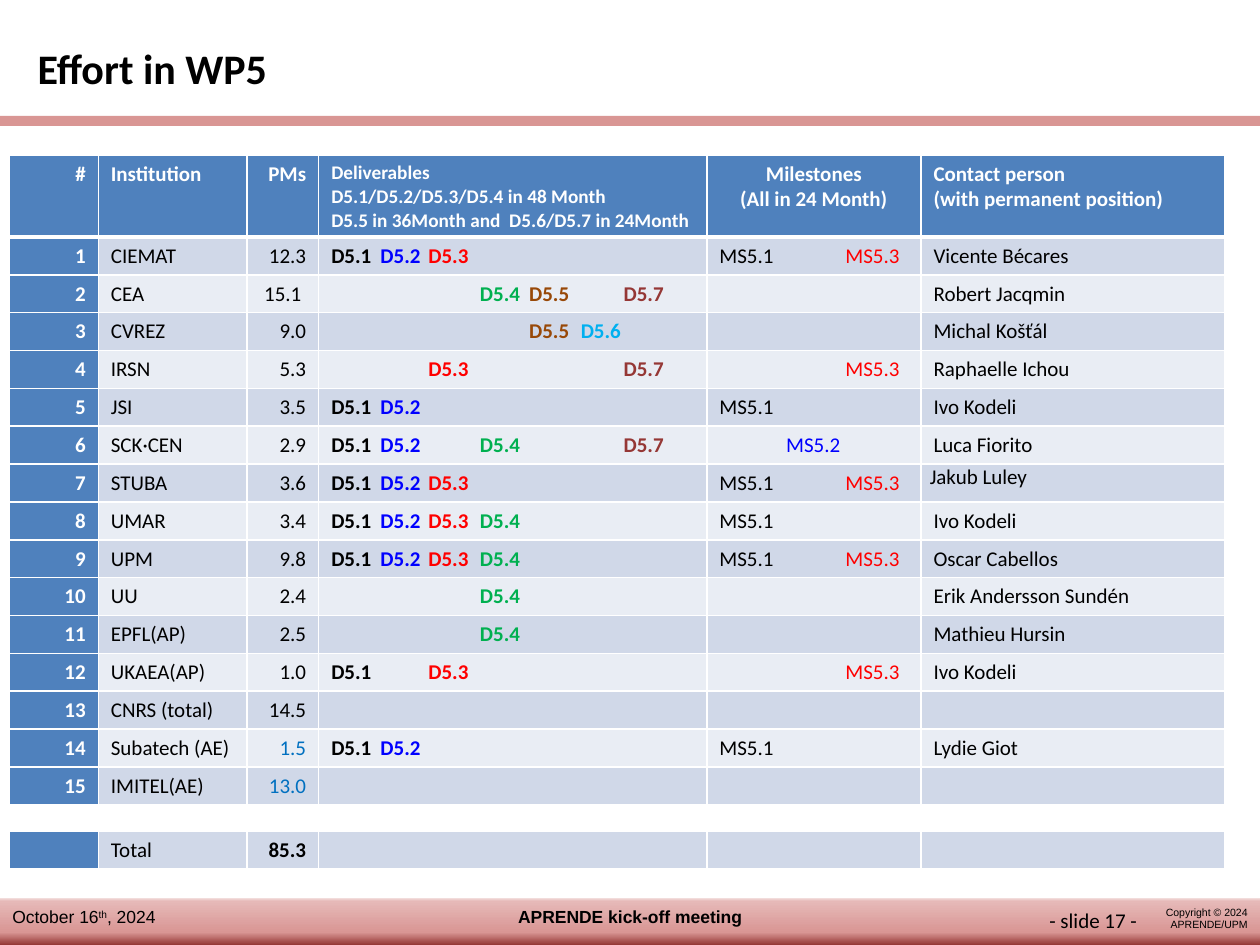
"""Build the WP5 effort slide with its partner table and footer."""
from lxml.etree import SubElement
from pptx import Presentation
from pptx.dml.color import RGBColor
from pptx.enum.shapes import MSO_SHAPE
from pptx.enum.text import MSO_AUTO_SIZE, PP_ALIGN
from pptx.oxml.ns import qn
from pptx.util import Inches, Pt


class Theme:
    heading_font, footer_font = "Calibri", "Arial"
    title_size, body_size, small_size, footer_size, copyright_size = 24, 12, 11, 10, 6
    black, white = "000000", "FFFFFF"
    header, band_dark, band_light = "4F81BD", "D0D8E8", "E9EDF4"
    rule, estimate = "D99694", "0070C0"
    footer_stops = [(0, "953735"), (27, "D99694"), (94, "E6B9B8"), (100, "F2DCDB")]
    deliverables = ["000000", "0000FF", "FF0000", "00B050", "984807", "00B0F0", "953735"]
    milestones = ["000000", "0000FF", "FF0000"]


def format_runs(paragraph, size, color, bold=False, font=Theme.heading_font):
    for run in paragraph.runs:
        run.font.name = font
        run.font.size = Pt(size)
        run.font.bold = bold
        run.font.color.rgb = RGBColor.from_string(color)


def add_label(slide, box, text, size, font, align=PP_ALIGN.LEFT, bold=False, wrap=True):
    label = slide.shapes.add_textbox(*[Inches(length) for length in box])
    frame = label.text_frame
    frame.word_wrap = wrap
    frame.auto_size = MSO_AUTO_SIZE.SHAPE_TO_FIT_TEXT
    frame.text = text
    for paragraph in frame.paragraphs:
        paragraph.alignment = align
        format_runs(paragraph, size, Theme.black, bold, font)
    return label


HEADERS = [
    "#",
    "Institution",
    "PMs",
    "Deliverables\nD5.1/D5.2/D5.3/D5.4 in 48 Month\nD5.5 in 36Month and  D5.6/D5.7 in 24Month",
    "Milestones\n(All in 24 Month)",
    "Contact person\n(with permanent position)",
]
PARTNERS = [
    ("CIEMAT", "12.3", [1, 2, 3], [1, 3], "Vicente Bécares"),
    ("CEA", "15.1 ", [4, 5, 7], [], "Robert Jacqmin"),
    ("CVREZ", "9.0", [5, 6], [], "Michal Košťál"),
    ("IRSN", "5.3", [3, 7], [3], "Raphaelle Ichou"),
    ("JSI", "3.5", [1, 2], [1], "Ivo Kodeli"),
    ("SCK·CEN", "2.9", [1, 2, 4, 7], [2], "Luca Fiorito"),
    ("STUBA", "3.6", [1, 2, 3], [1, 3], "Jakub Luley"),
    ("UMAR", "3.4", [1, 2, 3, 4], [1], "Ivo Kodeli"),
    ("UPM", "9.8", [1, 2, 3, 4], [1, 3], "Oscar Cabellos"),
    ("UU", "2.4", [4], [], "Erik Andersson Sundén"),
    ("EPFL(AP)", "2.5", [4], [], "Mathieu Hursin"),
    ("UKAEA(AP)", "1.0", [1, 3], [3], "Ivo Kodeli"),
    ("CNRS (total)", "14.5", [], [], ""),
    ("Subatech (AE)", "1.5", [1, 2], [1], "Lydie Giot"),
    ("IMITEL(AE)", "13.0", [], [], ""),
]
COLUMN_WIDTHS = [0.71, 1.18, 0.57, 3.08, 1.7, 2.41]
ROW_HEIGHTS = [0.65] + [0.3] * len(PARTNERS) + [0.21, 0.29]
ALIGNMENTS = [PP_ALIGN.RIGHT, PP_ALIGN.LEFT, PP_ALIGN.RIGHT] + [PP_ALIGN.LEFT] * 3
CODE_COLUMNS = {
    3: ("D5.", Theme.deliverables, [0.39, 0.77, 1.18, 1.57, 1.98, 2.32], True),
    4: ("MS5.", Theme.milestones, [0.53, 1.0], False),
}

presentation = Presentation()
presentation.slide_width, presentation.slide_height = Inches(10), Inches(7.5)
slide = presentation.slides.add_slide(presentation.slide_layouts[6])

bars = []
for top, height in [(7.13, 0.37), (0.92, 0.08)]:
    bar = slide.shapes.add_shape(
        MSO_SHAPE.RECTANGLE, 0, Inches(top), Inches(10), Inches(height)
    )
    bar.shadow.inherit = False
    bar.line.fill.background()
    bars.append(bar)
footer_bar, title_rule = bars
title_rule.fill.solid()
title_rule.fill.fore_color.rgb = RGBColor.from_string(Theme.rule)
footer_bar.fill.gradient()
footer_bar.fill.gradient_angle = 90
stop_list = footer_bar._element.spPr.find(".//" + qn("a:gsLst"))
for stop in list(stop_list):
    stop_list.remove(stop)
for position, color in Theme.footer_stops:
    stop = SubElement(stop_list, qn("a:gs"), pos=str(position * 1000))
    SubElement(stop, qn("a:srgbClr"), val=color)

date_label = add_label(
    slide, (0, 7.14, 2.78, 0.27), "October 16", Theme.footer_size, Theme.footer_font
)
date_paragraph = date_label.text_frame.paragraphs[0]
for text in ["th", ", 2024"]:
    date_paragraph.add_run().text = text
format_runs(date_paragraph, Theme.footer_size, Theme.black, font=Theme.footer_font)
date_paragraph.runs[1].font._element.set("baseline", "30000")

add_label(slide, (3.61, 7.14, 2.78, 0.27), "APRENDE kick-off meeting",
          Theme.footer_size, Theme.footer_font, PP_ALIGN.CENTER, bold=True)
add_label(slide, (9.09, 7.14, 0.91, 0.3), "Copyright © 2024\nAPRENDE/UPM",
          Theme.copyright_size, Theme.footer_font, PP_ALIGN.RIGHT)
add_label(slide, (0.2, 0.29, 5, 0.5), "Effort in WP5",
          Theme.title_size, Theme.heading_font, bold=True)
add_label(slide, (8.23, 7.15, 0.93, 0.3), "- slide 17 -",
          Theme.body_size, Theme.heading_font, wrap=False)

rows = [HEADERS]
rows += [(str(number), *partner) for number, partner in enumerate(PARTNERS, 1)]
rows += [[""] * 6, ["", "Total", "85.3", "", "", ""]]
gap_row, total_row = len(rows) - 2, len(rows) - 1

table = slide.shapes.add_table(
    len(rows), len(HEADERS), Inches(0.07), Inches(1.23),
    Inches(sum(COLUMN_WIDTHS)), Inches(sum(ROW_HEIGHTS)),
).table
for column, width in zip(table.columns, COLUMN_WIDTHS):
    column.width = Inches(width)
for row, height in zip(table.rows, ROW_HEIGHTS):
    row.height = Inches(height)

for row_index, values in enumerate(rows):
    for column_index, value in enumerate(values):
        cell = table.cell(row_index, column_index)
        is_header = row_index == 0
        is_blue = is_header or column_index == 0
        properties = cell._tc.get_or_add_tcPr()
        for side in ["lnL", "lnR", "lnT", "lnB"]:
            thick = (is_header and side == "lnB") or (row_index == 1 and side == "lnT")
            border = SubElement(properties, qn(f"a:{side}"), w=str(Pt(3 if thick else 1)))
            border_fill = SubElement(border, qn("a:solidFill"))
            SubElement(border_fill, qn("a:srgbClr"), val=Theme.white)
        fill_color = Theme.band_dark if row_index % 2 else Theme.band_light
        if row_index == gap_row:
            fill_color = Theme.white
            cell.margin_top = cell.margin_bottom = 0
        elif is_blue:
            fill_color = Theme.header
        elif row_index == total_row:
            fill_color = Theme.band_dark
        cell.fill.solid()
        cell.fill.fore_color.rgb = RGBColor.from_string(fill_color)

        size = Theme.small_size if is_header and column_index == 3 else Theme.body_size
        if isinstance(value, list):
            prefix, colors, tab_stops, bold = CODE_COLUMNS[column_index]
            paragraph = cell.text_frame.paragraphs[0]
            previous = 1
            for code in value:
                paragraph.add_run().text = "\t" * (code - previous) + f"{prefix}{code}"
                previous = code
            format_runs(paragraph, size, Theme.black, bold)
            for run, code in zip(paragraph.runs, value):
                run.font.color.rgb = RGBColor.from_string(colors[code - 1])
            tab_list = SubElement(paragraph._p.get_or_add_pPr(), qn("a:tabLst"))
            for tab_stop in tab_stops:
                SubElement(tab_list, qn("a:tab"), pos=str(Inches(tab_stop)), algn="l")
        else:
            cell.text_frame.text = value
            color = Theme.white if is_blue else Theme.black
            if column_index == 2 and value in ("1.5", "13.0"):
                color = Theme.estimate
            for paragraph in cell.text_frame.paragraphs:
                paragraph.alignment = ALIGNMENTS[column_index]
                if is_header and column_index == 4:
                    paragraph.alignment = PP_ALIGN.CENTER
                format_runs(paragraph, size, color, is_blue or value == "85.3")
        if value in ("", []):
            empty_size = 6 if row_index == gap_row else size
            ending = cell.text_frame.paragraphs[0]._p.get_or_add_endParaRPr()
            ending.set("sz", str(empty_size * 100))
        if value == "Jakub Luley":
            cell.margin_left = cell.margin_right = Inches(0.07)
            cell.margin_top = cell.margin_bottom = 0

presentation.save("out.pptx")
